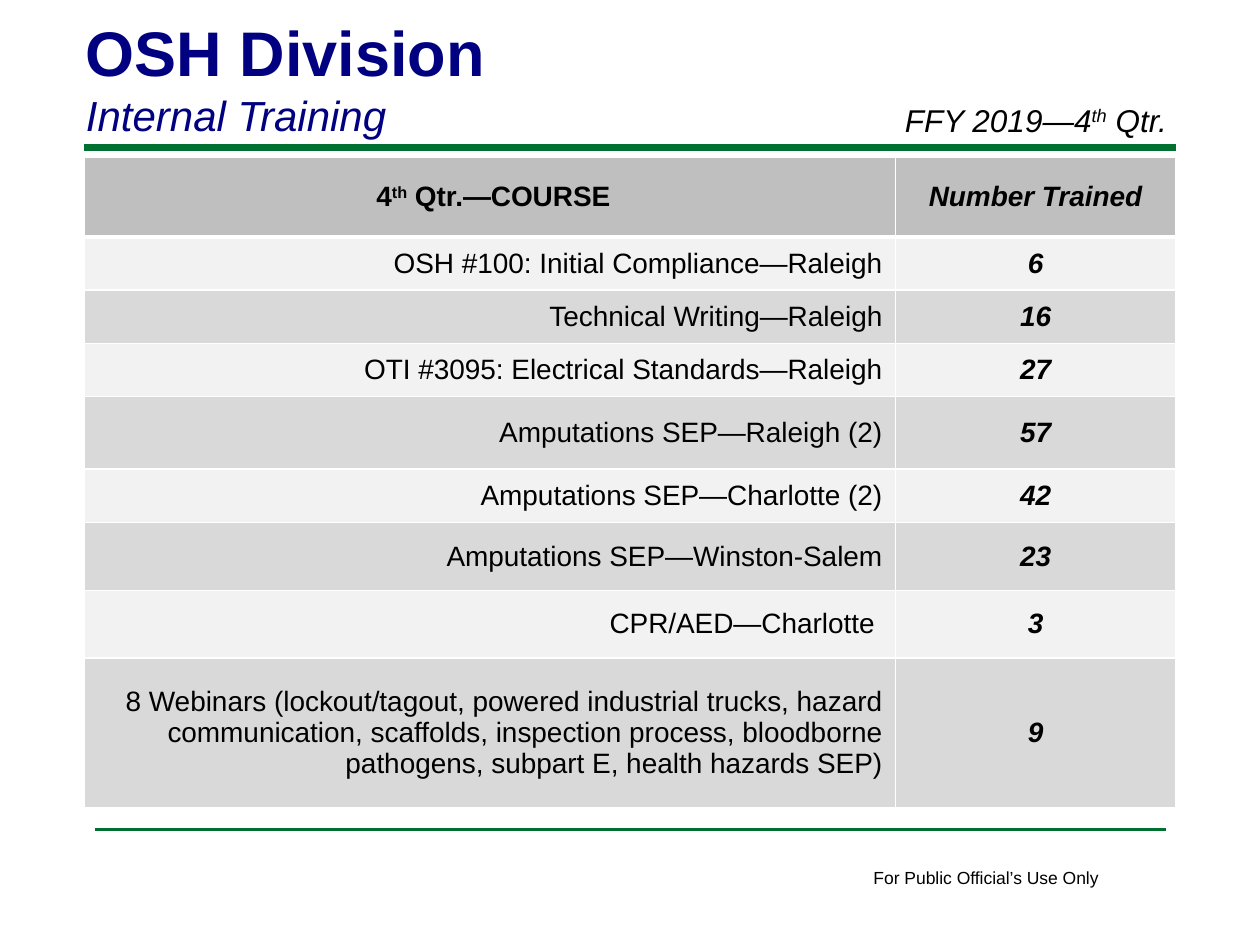
from dataclasses import dataclass

from lxml.etree import SubElement
from pptx import Presentation
from pptx.dml.color import RGBColor as RGB
from pptx.enum.shapes import MSO_CONNECTOR as Connector
from pptx.enum.text import MSO_ANCHOR as Anchor, PP_ALIGN as Align
from pptx.oxml import parse_xml
from pptx.oxml.ns import nsdecls, qn
from pptx.util import Pt


@dataclass(frozen=True)
class Theme:
    font: str = "Arial"
    title: str = "000080"
    text: str = "000000"
    rule: str = "007030"
    grid: str = "FFFFFF"
    header: str = "BFBFBF"
    bands: tuple = ("F2F2F2", "D9D9D9")
    title_size: int = 36
    subtitle_size: int = 24
    period_size: int = 18
    table_size: int = 16
    footer_size: int = 10


T = Theme()

HEADER = ((" 4", "th", " Qtr.—COURSE"), ("Number Trained",))
# Course, number trained, row height
COURSES = [
    ("OSH #100: Initial Compliance—Raleigh", 6, 30.4),
    ("Technical Writing—Raleigh", 16, 30.4),
    ("OTI #3095: Electrical Standards—Raleigh", 27, 30.4),
    ("Amputations SEP—Raleigh (2)", 57, 41.6),
    ("Amputations SEP—Charlotte (2)", 42, 30.4),
    ("Amputations SEP—Winston-Salem", 23, 38.8),
    ("CPR/AED—Charlotte ", 3, 38.8),
    ("8 Webinars (lockout/tagout, powered industrial trucks, hazard "
     "communication, scaffolds, inspection process, bloodborne pathogens, "
     "subpart E, health hazards SEP)", 9, 85.6),
]
HEADER_HEIGHT = 45.4


def write(p, parts, size, color=T.text, bold=False, italic=False):
    """Fill a paragraph; every second part is a superscript."""
    for i, part in enumerate(parts):
        r = p.add_run()
        r.text = part
        f = r.font
        f.name, f.size, f.bold, f.italic = T.font, Pt(size), bold, italic
        f.color.rgb = RGB.from_string(color)
        if i % 2:
            r._r.get_or_add_rPr().set("baseline", "30000")


def add_box(s, x, y, w, h, wrap=True):
    tf = s.shapes.add_textbox(Pt(x), Pt(y), Pt(w), Pt(h)).text_frame
    tf.word_wrap = wrap
    return tf


def add_rule(s, x, y, w, weight):
    line = s.shapes.add_connector(Connector.STRAIGHT, Pt(x), Pt(y), Pt(x + w), Pt(y))
    line.line.color.rgb = RGB.from_string(T.rule)
    line.line.width = Pt(weight)
    SubElement(line._element.spPr, qn("a:effectLst"))


def add_heading(s, x, y, w, h):
    # Title and subtitle
    tf = add_box(s, x - 6, y, 594, h)
    write(tf.paragraphs[0], ["OSH Division"], T.title_size, T.title, bold=True)
    write(tf.add_paragraph(), ["Internal Training"], T.subtitle_size, T.title, italic=True)
    # Reporting period
    tf = add_box(s, x + w - 162, y + 49.7, 180, 28.8)
    write(tf.paragraphs[0], ["FFY 2019—4", "th", " Qtr."], T.period_size, italic=True)
    # Rule below the heading
    add_rule(s, x, y + h, w, 4)


def style_cell(cell, fill, bottom):
    cell.vertical_anchor = Anchor.MIDDLE
    cell.fill.solid()
    cell.fill.fore_color.rgb = RGB.from_string(fill)
    tc_pr = cell._tc.get_or_add_tcPr()
    for i, (side, weight) in enumerate(zip("LRTB", (1, 1, 1, bottom))):
        tc_pr.insert(i, parse_xml(
            f'<a:ln{side} {nsdecls("a")} w="{Pt(weight)}"><a:solidFill>'
            f'<a:srgbClr val="{T.grid}"/></a:solidFill></a:ln{side}>'))


def add_course_table(s, x, y, w, h):
    table = s.shapes.add_table(len(COURSES) + 1, 2, Pt(x), Pt(y), Pt(w), Pt(h)).table
    count_width = 160.4
    for col, width in zip(table.columns, (w - count_width, count_width)):
        col.width = Pt(width)
    heights = [HEADER_HEIGHT] + [height for *_, height in COURSES]
    for row, height in zip(table.rows, heights):
        row.height = Pt(height)

    # Header row
    for c, parts in enumerate(HEADER):
        cell = table.cell(0, c)
        style_cell(cell, T.header, 3)
        p = cell.text_frame.paragraphs[0]
        p.alignment = Align.CENTER
        write(p, parts, T.table_size, bold=True, italic=c == 1)

    # Banded course rows
    for i, (course, count, _) in enumerate(COURSES):
        for c, value in enumerate((course, str(count))):
            cell = table.cell(i + 1, c)
            style_cell(cell, T.bands[i % 2], 1)
            p = cell.text_frame.paragraphs[0]
            p.alignment = Align.CENTER if c else Align.RIGHT
            write(p, [value], T.table_size, bold=c == 1, italic=c == 1)


def add_footer(s, x, y, w):
    add_rule(s, x, y, w, 2)
    tf = add_box(s, x + 438, y + 18, 144.6, 19.4, wrap=False)
    write(tf.paragraphs[0], ["For Public Official’s Use Only"], T.footer_size)


def main():
    prs = Presentation()
    prs.slide_width, prs.slide_height = Pt(720), Pt(540)
    s = prs.slides.add_slide(prs.slide_layouts[6])
    add_footer(s, 54, 474, 612)
    add_course_table(s, 48, 90, 624, 372)
    add_heading(s, 48, 4.3, 624, 79.9)
    prs.save("out.pptx")


if __name__ == "__main__":
    main()
